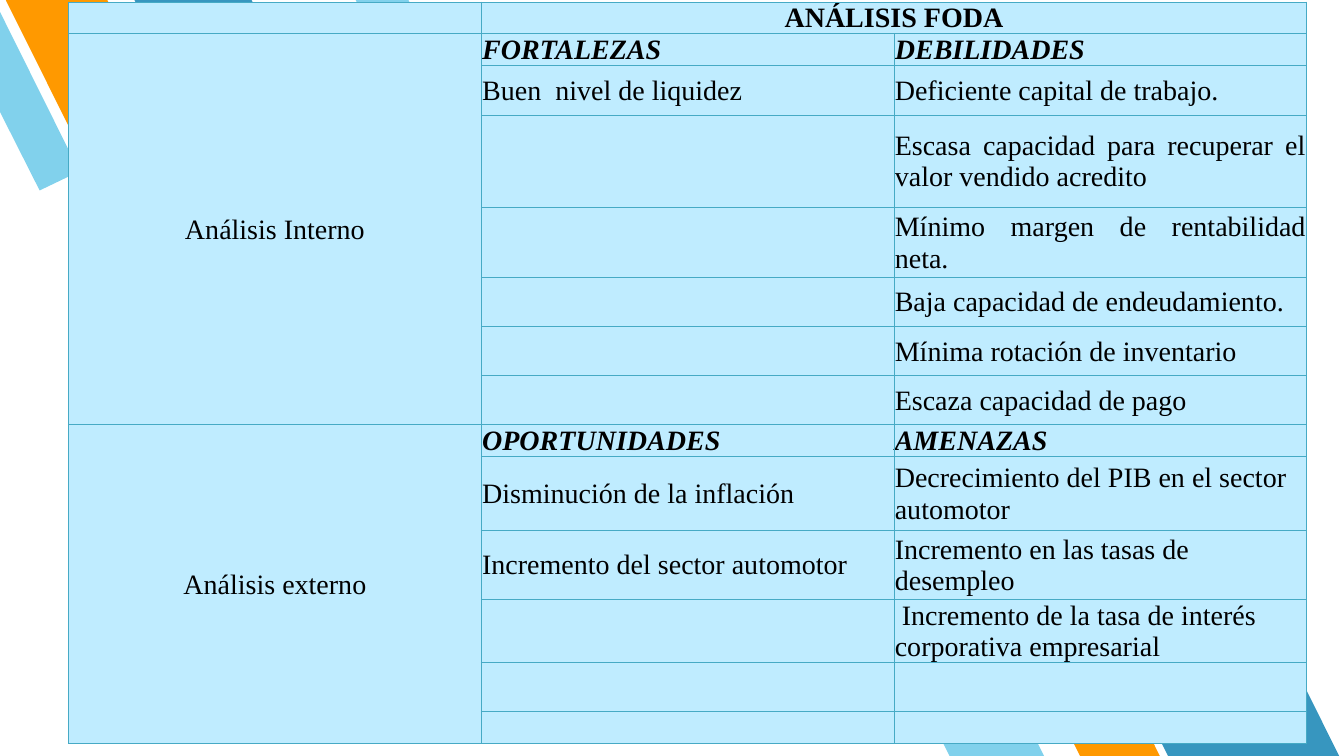
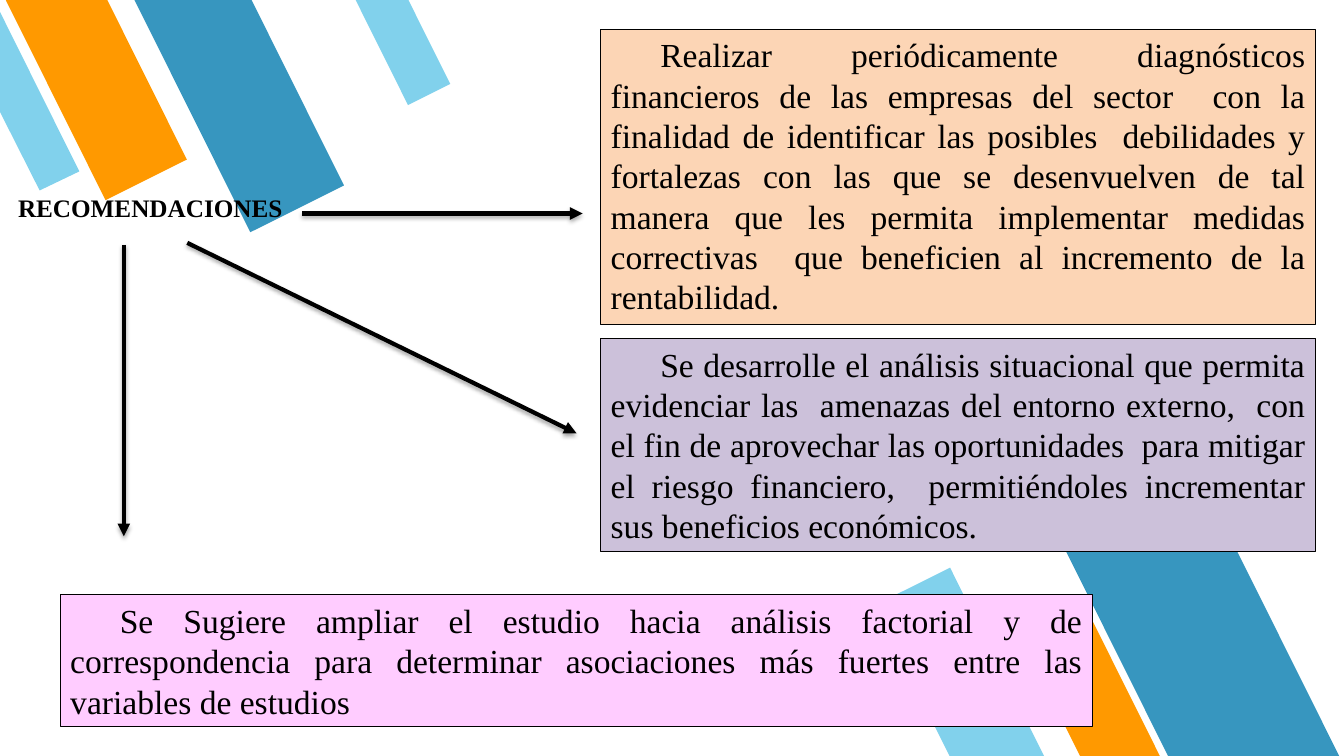
from lxml import etree
from pptx import Presentation
from pptx import util as u
from pptx.dml.color import RGBColor
from pptx.enum import shapes, text
from pptx.oxml import ns

Cm, Pt = u.Cm, u.Pt
FONT = "Times New Roman"
COLORS = {
    "sky": "81D1EC", "blue": "3796BF", "orange": "FF9900", "white": "FFFFFF",
    "black": "000000", "cell": "BFECFF", "grid": "46AAC5",
    "peach": "FCD5B5", "lilac": "CCC1DA", "pink": "FFCCFF",
}

# Shared bands: rotation, stripes (colour, box in cm), cut stripe (colour, points in cm)
BANDS = [
    (153.5,
     [("sky", (23.11, 14.5, 2.13, 5.31)),
      ("blue", (27.97, 10.85, 3.86, 9.6)),
      ("orange", (26.54, 15.24, 1.8, 4.47)),
      ("white", (21.29, 16.92, 1.02, 2.51))],
     ("white", [(32, 8.1), (30.1, 9.02), (33.87, 16.59), (33.87, 11.84)])),
    (333.5,
     [("white", (7.16, -0.41, 1.07, 2.67)),
      ("orange", (1.27, -0.86, 2.29, 5.69)),
      ("blue", (4.7, -0.97, 2.64, 6.58)),
      ("sky", (9.55, -0.46, 1.19, 3))],
     ("sky", [(1, 4.8), (2, 4.32), (0, 0.3), (0, 2.82)])),
]

# SWOT table: heading, then blocks of (label, alignment, column heads, rows)
TABLE_TITLE = "ANÁLISIS FODA"
BLOCKS = [
    ("Análisis Interno", text.PP_ALIGN.JUSTIFY, ("FORTALEZAS", "DEBILIDADES"), [
        ("Buen  nivel de liquidez", "Deficiente capital de trabajo."),
        ("", "Escasa capacidad para recuperar el valor vendido acredito"),
        ("", "Mínimo margen de rentabilidad neta."),
        ("", "Baja capacidad de endeudamiento."),
        ("", "Mínima rotación de inventario"),
        ("", "Escaza capacidad de pago"),
    ]),
    ("Análisis externo", text.PP_ALIGN.LEFT, ("OPORTUNIDADES", "AMENAZAS"), [
        ("Disminución de la inflación", "Decrecimiento del PIB en el sector automotor"),
        ("Incremento del sector automotor", "Incremento en las tasas de desempleo"),
        ("", " Incremento de la tasa de interés corporativa empresarial"),
        ("", ""),
        ("", ""),
    ]),
]
ROW_HEIGHTS = [0.61, 0.61, 1.24, 2.34, 1.75, 1.24, 1.24, 1.24,
               0.61, 1.85, 1.75, 1.24, 1.24, 0.61]
COL_WIDTH = 10.4

# Recommendations: title, boxes (colour, box in cm, text), arrows (start, end)
TITLE = "RECOMENDACIONES"
BOXES = [
    ("peach", (15.14, 0.74, 18.01, 7.44),
     "Realizar periódicamente diagnósticos financieros de las empresas del sector  con la "
     "finalidad de identificar las posibles  debilidades y fortalezas con las que se "
     "desenvuelven de tal manera que les permita implementar medidas correctivas  que "
     "beneficien al incremento de la rentabilidad."),
    ("lilac", (15.14, 8.53, 18.01, 5.38),
     "Se desarrolle el análisis situacional que permita evidenciar las  amenazas del entorno "
     "externo,  con el fin de aprovechar las oportunidades  para mitigar el riesgo "
     "financiero,  permitiéndoles incrementar sus beneficios económicos."),
    ("pink", (1.52, 14.99, 26.01, 3.33),
     "Se Sugiere ampliar el estudio hacia análisis factorial y de correspondencia para "
     "determinar asociaciones más fuertes entre las variables de estudios"),
]
ARROWS = [((7.62, 5.38), (14.68, 5.38)),
          ((4.72, 6.12), (14.53, 10.92)),
          ((3.12, 6.17), (3.12, 13.51))]


def rgb(name):
    return RGBColor.from_string(COLORS[name])


def cms(values):
    return [Cm(v) for v in values]


def sub(parent, tag, **attrs):
    return etree.SubElement(parent, ns.qn(tag), attrs)


def paint(sp, fill, line=None):
    sp.shadow.inherit = False
    sp.fill.solid()
    sp.fill.fore_color.rgb = rgb(fill)
    if line:
        sp.line.color.rgb = rgb(line)
        sp.line.width = Pt(0.75)
    else:
        sp.line.fill.background()


def write(tf, content, size, align, **font):
    p = tf.paragraphs[0]
    p.alignment = align
    r = p.add_run()
    r.text = content
    for name, value in {"name": FONT, "size": Pt(size), **font}.items():
        setattr(r.font, name, value)
    r.font.color.rgb = rgb("black")
    return p


def add_bands(prs, s):
    """Draw the corner bands and place them on the master, behind every slide."""
    for n, (angle, stripes, (cut_fill, points)) in enumerate(BANDS):
        grp = s.shapes.add_group_shape()
        for fill, box in stripes:
            sp = grp.shapes.add_shape(shapes.MSO_SHAPE.FLOWCHART_MANUAL_INPUT, *cms(box))
            sp.rotation = angle
            sp.element.spPr.get_or_add_xfrm().set("flipH", "1")
            paint(sp, fill)
        first, *rest = [cms(pt) for pt in points]
        outline = grp.shapes.build_freeform(*first)
        outline.add_line_segments(rest, close=True)
        paint(outline.convert_to_shape(), cut_fill)
        for i, e in enumerate(grp.element.iter(ns.qn("p:cNvPr")), 100 + 20 * n):
            e.set("id", str(i))
        prs.slide_master.shapes.element.insert(2 + n, grp.element)


def style_cell(cell):
    for side in ("left", "right", "top"):
        setattr(cell, f"margin_{side}", Cm(0.02))
    cell.margin_bottom = 0
    cell.vertical_anchor = text.MSO_ANCHOR.MIDDLE
    cell.fill.solid()
    cell.fill.fore_color.rgb = rgb("cell")
    tcPr = cell._tc.get_or_add_tcPr()
    for i, side in enumerate("LRTB"):
        ln = sub(tcPr, f"a:ln{side}", w=str(Pt(0.75)))
        sub(sub(ln, "a:solidFill"), "a:srgbClr", val=COLORS["grid"])
        tcPr.insert(i, ln)


def add_swot(s):
    center, left = text.PP_ALIGN.CENTER, text.PP_ALIGN.LEFT
    table = s.shapes.add_table(len(ROW_HEIGHTS), 3, Cm(1.73), Cm(0.05),
                               Cm(3 * COL_WIDTH), Cm(sum(ROW_HEIGHTS))).table
    for col in table.columns:
        col.width = Cm(COL_WIDTH)
    for row, height in zip(table.rows, ROW_HEIGHTS):
        row.height = Cm(height)
    for cell in table.iter_cells():
        style_cell(cell)

    def put(row, col, content, align, **font):
        if content:
            write(table.cell(row, col).text_frame, content, 20, align, **font)

    table.cell(0, 1).merge(table.cell(0, 2))
    put(0, 1, TABLE_TITLE, center, bold=True)
    top = 1
    for label, align, heads, rows in BLOCKS:
        table.cell(top, 0).merge(table.cell(top + len(rows), 0))
        put(top, 0, label, center, bold=False)
        for col, head in enumerate(heads, 1):
            put(top, col, head, left, bold=True, italic=True)
        for i, row in enumerate(rows, top + 1):
            for col, content in enumerate(row, 1):
                put(i, col, content, align, bold=False)
        top += len(rows) + 1


def add_box(s, fill, box, content):
    sp = s.shapes.add_shape(shapes.MSO_SHAPE.RECTANGLE, *cms(box))
    paint(sp, fill, "black")
    tf = sp.text_frame
    tf.word_wrap = True
    tf.auto_size = text.MSO_AUTO_SIZE.SHAPE_TO_FIT_TEXT
    tf.vertical_anchor = text.MSO_ANCHOR.TOP
    p = write(tf, content, 24, text.PP_ALIGN.JUSTIFY)
    p._p.get_or_add_pPr().set("indent", str(Cm(1.25)))


def add_arrow(s, start, end):
    line = s.shapes.add_connector(shapes.MSO_CONNECTOR.STRAIGHT, *cms(start + end))
    line.line.color.rgb = rgb("black")
    line.line.width = Pt(3)
    sub(line.line._get_or_add_ln(), "a:tailEnd", type="triangle")
    shadow = sub(sub(line.element.spPr, "a:effectLst"), "a:outerShdw", blurRad="40000",
                 dist="23000", dir="5400000", rotWithShape="0")
    sub(sub(shadow, "a:srgbClr", val=COLORS["black"]), "a:alpha", val="35000")


def set_title(s, content, box):
    title = s.shapes.title
    title.left, title.top, title.width, title.height = cms(box)
    tf = title.text_frame
    tf.word_wrap = False
    tf.auto_size = text.MSO_AUTO_SIZE.SHAPE_TO_FIT_TEXT
    tf.vertical_anchor = text.MSO_ANCHOR.TOP
    write(tf, content, 18, text.PP_ALIGN.LEFT, bold=True)


def main():
    prs = Presentation()
    prs.slide_width, prs.slide_height = Cm(33.87), Cm(19.05)

    # SWOT analysis
    s = prs.slides.add_slide(prs.slide_layouts.get_by_name("Blank"))
    add_bands(prs, s)
    add_swot(s)

    # Recommendations
    s = prs.slides.add_slide(prs.slide_layouts.get_by_name("Title Only"))
    set_title(s, TITLE, (0.2, 4.72, 7.42, 1.02))
    for box in BOXES:
        add_box(s, *box)
    for arrow in ARROWS:
        add_arrow(s, *arrow)

    prs.save("out.pptx")


if __name__ == "__main__":
    main()
